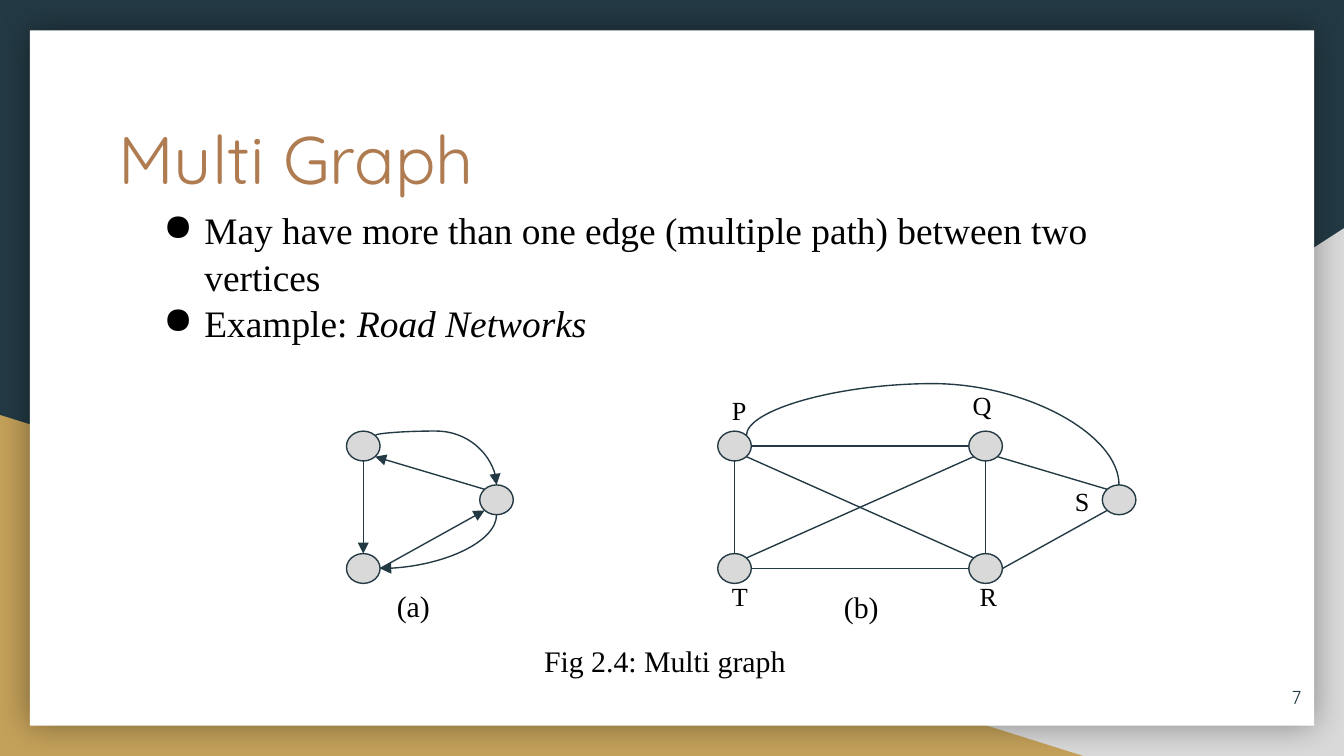
from pptx import Presentation
from pptx.dml.color import RGBColor
from pptx.enum.shapes import MSO_CONNECTOR, MSO_SHAPE
from pptx.enum.text import MSO_ANCHOR, PP_ALIGN
from pptx.oxml.ns import qn
from pptx.util import Pt
from lxml import etree

LINE, CURVE = MSO_CONNECTOR.STRAIGHT, MSO_CONNECTOR.CURVE
OVAL, RECT, WEDGE = MSO_SHAPE.OVAL, MSO_SHAPE.RECTANGLE, MSO_SHAPE.RIGHT_TRIANGLE
TOP, MIDDLE = MSO_ANCHOR.TOP, MSO_ANCHOR.MIDDLE
LEFT, RIGHT = PP_ALIGN.LEFT, PP_ALIGN.RIGHT

NAVY = RGBColor(0x23, 0x3A, 0x44)
GRAY = RGBColor(0xD9, 0xD9, 0xD9)
GOLD = RGBColor(0xC4, 0xA1, 0x5A)
BROWN = RGBColor(0xAF, 0x7B, 0x51)
WHITE = RGBColor(0xFF, 0xFF, 0xFF)
BLACK = RGBColor(0, 0, 0)
SERIF, SANS = "Times New Roman", "Quicksand"

NODE_W, NODE_H = 18, 16
DIAG = 0.71
SIDES = {
    "n": (0, -1), "s": (0, 1), "e": (1, 0), "w": (-1, 0),
    "ne": (DIAG, -DIAG), "nw": (-DIAG, -DIAG),
    "se": (DIAG, DIAG), "sw": (-DIAG, DIAG),
}

# Node centres; the two graphs share their rows
ROW_TOP, ROW_MID, ROW_LOW = 239, 267.8, 304.6
NODES_A = {"U": (194.6, ROW_TOP), "V": (194.6, ROW_LOW), "W": (266, ROW_MID)}
NODES_B = {"P": (393.5, ROW_TOP), "Q": (528, ROW_TOP), "S": (599.5, ROW_MID),
           "T": (393.5, ROW_LOW), "R": (528, ROW_LOW)}
EDGES_A = [("V", "e", "W", "sw"), ("W", "nw", "U", "se"), ("U", "s", "V", "n")]
EDGES_B = [("Q", "w", "P", "e"), ("R", "w", "T", "e"), ("R", "nw", "P", "se"),
           ("T", "ne", "Q", "sw"), ("T", "n", "P", "s"), ("R", "e", "S", "sw"),
           ("Q", "se", "S", "nw"), ("R", "n", "Q", "s")]
TAGS_B = {"P": (385, 203.8), "Q": (514, 201.6), "S": (568.8, 252.7),
          "T": (385, 303.8), "R": (517.7, 303.8)}


def child(parent, tag, **attrs):
    return etree.SubElement(parent, qn(tag), attrs)


def shape(slide, kind, box, fill, line=None):
    item = slide.shapes.add_shape(kind, *map(Pt, box))
    item.shadow.inherit = False
    item.fill.solid()
    item.fill.fore_color.rgb = fill
    if line is None:
        item.line.fill.background()
    else:
        item.line.color.rgb = line
        item.line.width = Pt(0.75)
    return item


def style(par, size, font, color):
    for run in par.runs:
        run.font.size, run.font.name = Pt(size), font
        run.font.color.rgb = color


def frame(item, inset=7.2, anchor=TOP):
    text = item.text_frame
    text.word_wrap = True
    text.vertical_anchor = anchor
    text.margin_left = text.margin_right = Pt(inset)
    text.margin_top = text.margin_bottom = Pt(inset)
    return text


def label(slide, words, box, size, font=SERIF, color=BLACK, align=LEFT,
          anchor=TOP, inset=7.2):
    text = frame(slide.shapes.add_textbox(*map(Pt, box)), inset, anchor)
    text.text = words
    text.paragraphs[0].alignment = align
    style(text.paragraphs[0], size, font, color)


def wire(slide, kind, start, end, arrow=None):
    """Draw a connector; arrow is headEnd, tailEnd or None."""
    item = slide.shapes.add_connector(kind, *map(Pt, start + end))
    item.line.color.rgb = NAVY
    item.line.width = Pt(0.75)
    props = item._element.spPr
    if arrow:
        child(props.find(qn("a:ln")), "a:" + arrow, type="triangle", w="med", len="med")
    child(props, "a:effectLst")
    return props


def arch(slide, start, end, bend, arrow=None):
    """Draw a curve that leaves upwards, as a connector turned by 270 degrees."""
    mid_x, mid_y = (start[0] + end[0]) / 2, (start[1] + end[1]) / 2
    half_x, half_y = (end[0] - start[0]) / 2, (end[1] - start[1]) / 2
    props = wire(slide, CURVE, (mid_x + half_y, mid_y - half_x),
                 (mid_x - half_y, mid_y + half_x), arrow)
    props.find(qn("a:xfrm")).set("rot", str(270 * 60000))
    guides = props.find(qn("a:prstGeom")).find(qn("a:avLst"))
    child(guides, "a:gd", name="adj1", fmla=f"val {round(bend * 100000)}")


def site(node, side):
    across, down = SIDES[side]
    return node[0] + across * NODE_W / 2, node[1] + down * NODE_H / 2


def graph(slide, nodes, edges, arrow=None):
    for x, y in nodes.values():
        box = (x - NODE_W / 2, y - NODE_H / 2, NODE_W, NODE_H)
        shape(slide, OVAL, box, GRAY, NAVY)
    for tail, out, head, into in edges:
        wire(slide, LINE, site(nodes[tail], out), site(nodes[head], into), arrow)


def backdrop(slide):
    slide.background.fill.solid()
    slide.background.fill.fore_color.rgb = NAVY
    wedge = shape(slide, WEDGE, (282, 122.3, 438, 282.7), GRAY)
    wedge._element.spPr.find(qn("a:xfrm")).set("flipH", "1")
    shape(slide, WEDGE, (0, 222.3, 580.3, 182.7), GOLD)
    card = shape(slide, RECT, (16, 16.2, 688, 372.5), WHITE)
    glow = child(card._element.spPr.find(qn("a:effectLst")), "a:outerShdw",
                 blurRad=str(Pt(18)), dist="0", dir="0", algn="ctr", rotWithShape="0")
    child(child(glow, "a:srgbClr", val="000000"), "a:alpha", val="40000")


def heading(slide, words):
    title = slide.shapes.title
    title.left, title.top, title.width, title.height = map(Pt, (56.2, 55.4, 333.4, 49.7))
    text = frame(title)
    text.text = words
    text.paragraphs[0].alignment = LEFT
    style(text.paragraphs[0], 36, SANS, BROWN)
    # Bring the title in front of the card
    slide.shapes._spTree.append(title._element)


def bullets(slide, items):
    text = frame(slide.shapes.add_textbox(*map(Pt, (68.4, 103, 550.8, 105))))
    for num, (plain, slant) in enumerate(items):
        par = text.add_paragraph() if num else text.paragraphs[0]
        par.text = plain
        par.line_spacing = 1.04
        if slant:
            run = par.add_run()
            run.text, run.font.italic = slant, True
        style(par, 20, SERIF, BLACK)
        props = par._p.get_or_add_pPr()
        props.set("marL", str(Pt(34)))
        props.set("indent", str(Pt(-22)))
        child(child(props, "a:buClr"), "a:srgbClr", val="000000")
        child(props, "a:buChar", char="●")


def main():
    deck = Presentation()
    deck.slide_width, deck.slide_height = Pt(720), Pt(405)
    slide = deck.slides.add_slide(deck.slide_layouts[5])
    backdrop(slide)
    heading(slide, "Multi Graph")
    bullets(slide, [
        ("May have more than one edge (multiple path) between two vertices", ""),
        ("Example: ", "Road Networks"),
    ])

    # Directed graph (a)
    graph(slide, NODES_A, EDGES_A, "tailEnd")
    arch(slide, site(NODES_A["U"], "ne"), site(NODES_A["W"], "n"), -0.09, "tailEnd")
    props = wire(slide, CURVE, site(NODES_A["V"], "e"), site(NODES_A["W"], "s"), "headEnd")
    props.find(qn("a:prstGeom")).set("prst", "curvedConnector2")
    label(slide, "(a)", (207.6, 309.6, 34, 26.6), 16, inset=5)

    # Undirected graph (b)
    graph(slide, NODES_B, EDGES_B)
    arch(slide, site(NODES_B["P"], "ne"), site(NODES_B["S"], "n"), -1.05)
    for name, spot in TAGS_B.items():
        label(slide, name, spot + (28.8, 25.2), 14)
    label(slide, "(b)", (447.1, 310.3, 34, 26.6), 16, inset=5)

    # Caption and page number
    label(slide, "Fig 2.4: Multi graph", (284.4, 337, 156.2, 25.2), 16)
    label(slide, "7", (661, 357.8, 43.2, 31), 10, SANS, NAVY, RIGHT, MIDDLE)
    deck.save("out.pptx")


if __name__ == "__main__":
    main()
